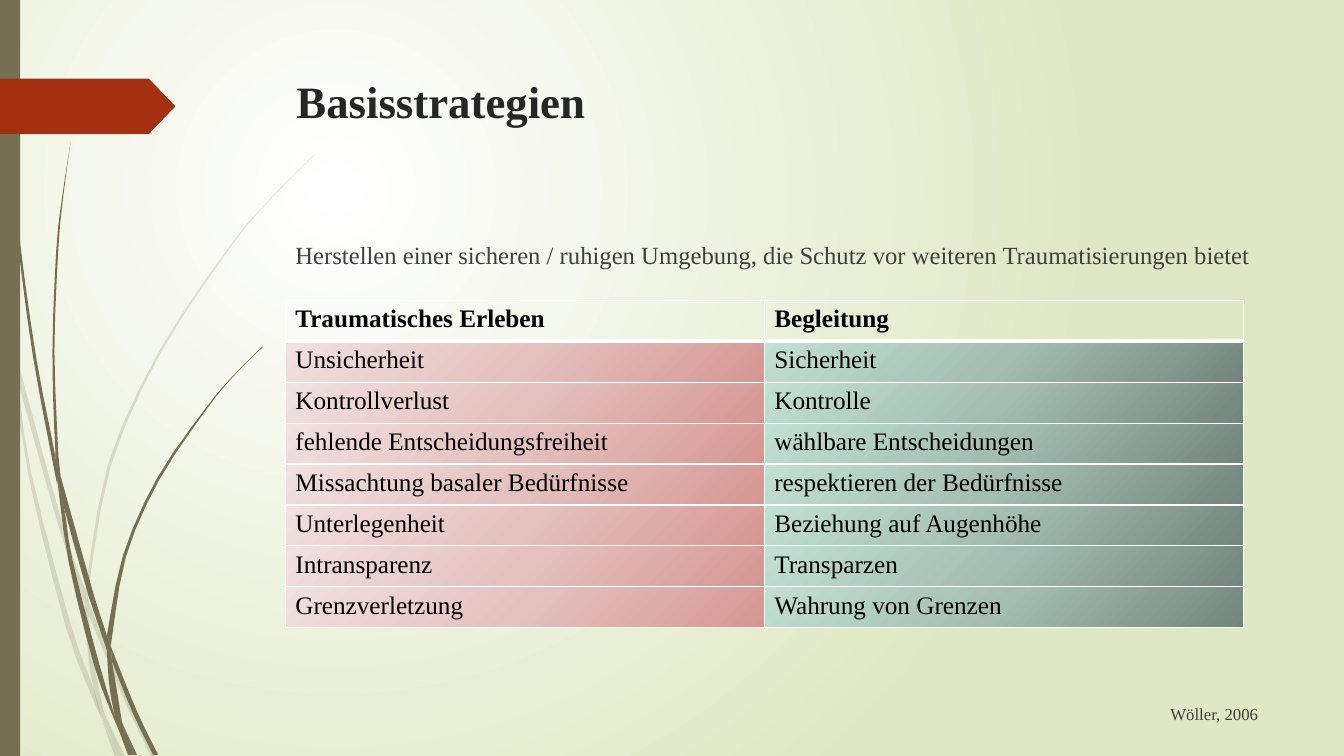
from lxml.etree import SubElement
from pptx import Presentation
from pptx.dml.color import RGBColor
from pptx.enum.shapes import MSO_SHAPE
from pptx.enum.text import MSO_ANCHOR, MSO_AUTO_SIZE, PP_ALIGN
from pptx.oxml import parse_xml
from pptx.oxml.ns import nsdecls, qn
from pptx.util import Inches, Pt

COLORS = {
    "white": "FFFFFF", "meadow": "DFE8C4", "olive": "766F54", "rust": "A53010",
    "title": "262626", "body": "404040", "black": "000000",
}
RED_STOPS = ["D69793", "E4C1BF", "F1E1E0"]
GREEN_STOPS = ["73857D", "A3BDB2", "C1E0D3"]
ROWS = [
    ("Traumatisches Erleben", "Begleitung"),
    ("Unsicherheit", "Sicherheit"),
    ("Kontrollverlust", "Kontrolle"),
    ("fehlende Entscheidungsfreiheit", "wählbare Entscheidungen"),
    ("Missachtung basaler Bedürfnisse", "respektieren der Bedürfnisse"),
    ("Unterlegenheit", "Beziehung auf Augenhöhe"),
    ("Intransparenz", "Transparzen"),
    ("Grenzverletzung", "Wahrung von Grenzen"),
]
FAINT_BLADES = [
    ([(0, 2.82), (0.09, 3.22), (0.11, 3.5)], [(0.1, 3.44), (0, 2.99)]),
    ([(0.14, 3.45), (0.62, 5.2), (0.85, 5.86)], [(0.84, 5.99), (0.58, 5.22), (0.17, 3.76)]),
    ([(0.88, 5.96), (0.92, 6.07), (1.27, 6.92), (1.55, 7.51)], [(1.5, 7.51), (1.23, 6.94), (0.88, 6.1)]),
    ([(1.05, 7.11), (1.24, 7.51)], [(1.19, 7.51), (1.05, 7.11)]),
    ([(0.11, 3.5), (0.17, 3.76), (0.31, 4.69), (0.7, 6.19), (0.93, 6.83), (1.01, 7.14)],
     [(0.92, 6.93), (0.65, 6.21), (0.28, 4.7), (0.11, 3.5)]),
    ([(0.84, 5.99), (0.87, 6.46), (0.93, 6.83), (1.05, 7.11)], [(1.03, 7.06), (0.91, 6.46), (0.88, 6.1)]),
    ([(3.12, 1.53), (2.68, 1.97), (2.28, 2.44), (1.58, 3.48), (1.07, 4.61), (0.85, 5.84)],
     [(0.88, 5.96), (0.88, 5.84), (1.1, 4.62), (1.6, 3.49), (2.29, 2.45), (2.68, 1.98), (3.12, 1.54)]),
    ([(1.01, 7.14), (1.14, 7.51)], [(1.19, 7.51), (1.01, 7.14)]),
    ([(0.85, 5.86), (0.84, 5.99), (0.88, 6.1)], [(0.88, 5.96), (0.85, 5.86)]),
    ([(0.93, 6.83), (0.99, 7.07), (1.19, 7.51)], [(1.19, 7.51), (1.05, 7.11), (0.96, 6.92)]),
]
DARK_BLADES = [
    ([(0.04, 0), (0.05, 0.48), (0.08, 1.09), (0.19, 2.32), (0.36, 3.55), (0.55, 4.53), (0.57, 4.81)],
     [(0.56, 4.77), (0.33, 3.55), (0.17, 2.33), (0.07, 1.1), (0.04, 0.48), (0.03, 0)]),
    ([(0.6, 4.72), (0.93, 5.9), (1.06, 6.31), (1.06, 6.45)], [(0.88, 5.92), (0.64, 5.05), (0.6, 4.72)]),
    ([(1.1, 6.41), (1.13, 6.49), (1.36, 7.06), (1.57, 7.49)], [(1.52, 7.49), (1.32, 7.08), (1.11, 6.56)]),
    ([(0.57, 4.77), (0.64, 5.05), (0.72, 5.56), (0.98, 6.57), (1.16, 7.17)],
     [(1.17, 7.22), (1.11, 7.08), (0.93, 6.59), (0.68, 5.57), (0.57, 4.77)]),
    ([(0.7, 1.41), (0.62, 1.93), (0.56, 2.45), (0.52, 3.49), (0.55, 4.49), (0.6, 4.72)],
     [(0.58, 4.53), (0.54, 3.49), (0.58, 2.45), (0.63, 1.93), (0.7, 1.41)]),
    ([(1.22, 7.19), (1.36, 7.49)], [(1.33, 7.49), (1.22, 7.19)]),
    ([(0.55, 4.49), (0.6, 4.72), (0.64, 5.05)], [(0.57, 4.77), (0.55, 4.53)]),
    ([(2.6, 3.44), (2.31, 3.73), (2.04, 4.05), (1.56, 4.74), (1.22, 5.51), (1.06, 6.31)],
     [(1.1, 6.41), (1.11, 6.33), (1.25, 5.52), (1.58, 4.76), (2.05, 4.06), (2.31, 3.74), (2.61, 3.44)]),
    ([(1.17, 7.22), (1.27, 7.49)], [(1.31, 7.49), (1.17, 7.22)]),
    ([(1.06, 6.45), (1.1, 6.91), (1.22, 7.19)], [(1.21, 7.16), (1.11, 6.56), (1.06, 6.45)]),
    ([(1.06, 6.31), (1.06, 6.45), (1.11, 6.56)], [(1.1, 6.41), (1.06, 6.31)]),
    ([(1.1, 6.91), (1.17, 7.22), (1.3, 7.49)], [(1.33, 7.49), (1.22, 7.19), (1.1, 6.91)]),
]


def smooth(points, steps=3):
    """Return points along a Catmull-Rom curve through the given points."""
    padded = [points[0], *points, points[-1]]
    curve = []
    for before, start, end, after in zip(padded, padded[1:], padded[2:], padded[3:]):
        for step in range(steps):
            t = step / steps
            curve.append(tuple(
                b + ((c - a) * t + (2 * a - 5 * b + 4 * c - d) * t**2
                     + (3 * b - a - 3 * c + d) * t**3) / 2
                for a, b, c, d in zip(before, start, end, after)))
    return curve + [points[-1]]


def gradient(stops, direction):
    """Return a gradient fill with evenly spaced stops."""
    marks = "".join(
        f'<a:gs pos="{100000 * index // (len(stops) - 1)}"><a:srgbClr val="{color}"/></a:gs>'
        for index, color in enumerate(stops))
    return parse_xml(
        f'<a:gradFill {nsdecls("a")} rotWithShape="1"><a:gsLst>{marks}</a:gsLst>{direction}</a:gradFill>')


class SlideBuilder:
    """Hold the font and the current slide and add its elements."""

    font_name = "Times New Roman"

    def __init__(self, slide):
        """Start on the given slide."""
        self.slide = slide

    def background(self, stops):
        """Fill the background with a radial gradient."""
        self.slide.background.fill.solid()
        solid = next(self.slide.element.iter(qn("a:solidFill")))
        solid.getparent().replace(solid, gradient(
            stops, '<a:path path="circle"><a:fillToRect l="50000" t="50000" r="100000" b="100000"/></a:path>'))

    def paint(self, shape, color):
        """Give a shape a plain fill without line or shadow."""
        shape.shadow.inherit = False
        shape.fill.solid()
        shape.fill.fore_color.rgb = RGBColor.from_string(COLORS[color])
        shape.line.fill.background()

    def preset(self, kind, box, color):
        """Add a plain preset shape."""
        shape = self.slide.shapes.add_shape(kind, *map(Inches, box))
        self.paint(shape, color)
        return shape

    def blade(self, edges, opacity):
        """Add a piece of grass between two curved edges."""
        start, *rest = [tuple(map(Inches, point)) for edge in edges for point in smooth(edge)]
        builder = self.slide.shapes.build_freeform(*start)
        builder.add_line_segments(rest, close=True)
        shape = builder.convert_to_shape()
        self.paint(shape, "olive")
        if opacity < 100:
            color = next(shape.element.spPr.iter(qn("a:srgbClr")))
            SubElement(color, qn("a:alpha")).set("val", str(opacity * 1000))

    def format(self, paragraph, size, color, bold=False):
        """Format the runs of a paragraph."""
        for run in paragraph.runs:
            run.font.name = self.font_name
            run.font.size = Pt(size)
            run.font.bold = bold
            run.font.color.rgb = RGBColor.from_string(COLORS[color])

    def placeholder(self, shape, box, text):
        """Place a placeholder in front and return its paragraphs."""
        shape.left, shape.top, shape.width, shape.height = map(Inches, box)
        shape.element.getparent().append(shape.element)
        frame = shape.text_frame
        frame.text = text
        frame.word_wrap = True
        frame.auto_size = MSO_AUTO_SIZE.NONE
        frame.vertical_anchor = MSO_ANCHOR.TOP
        for paragraph in frame.paragraphs:
            paragraph.alignment = PP_ALIGN.LEFT
        return frame.paragraphs

    def title(self, text):
        """Fill the title."""
        paragraph, = self.placeholder(self.slide.shapes.title, (2.84, 0.68, 9.75, 1.4), text)
        self.format(paragraph, 32, "title", True)

    def body(self, statement, citation):
        """Fill the body with a statement and a citation far below it."""
        paragraphs = self.placeholder(
            self.slide.placeholders[1], (2.83, 2.33, 9.75, 4.47), f"{statement}\n{citation}")
        for paragraph, size, space in zip(paragraphs, (17.6, 12), (10, 310)):
            self.format(paragraph, size, "body")
            paragraph.space_before = Pt(space)
            properties = paragraph._p.get_or_add_pPr()
            properties.set("marL", "0")
            properties.set("indent", "0")
            SubElement(properties, qn("a:buNone"))
        paragraphs[1].alignment = PP_ALIGN.RIGHT

    def cell(self, cell, text, header, first, stops):
        """Fill, frame and format one table cell."""
        cell.text_frame.text = text
        self.format(cell.text_frame.paragraphs[0], 18, "black", header)
        properties = cell._tc.get_or_add_tcPr()
        widths = {"L": 1, "R": 1, "T": 3 if first else 1, "B": 3 if header else 1}
        for side, width in widths.items():
            properties.append(parse_xml(
                f'<a:ln{side} {nsdecls("a")} w="{Pt(width)}"><a:solidFill>'
                f'<a:srgbClr val="{COLORS["white"]}"/></a:solidFill></a:ln{side}>'))
        if header:
            cell.fill.background()
        else:
            properties.append(gradient(stops, '<a:lin ang="13500000" scaled="1"/>'))

    def table(self, rows, box):
        """Add the two-column comparison."""
        table = self.slide.shapes.add_table(len(rows), 2, *map(Inches, box)).table
        for row, texts in enumerate(rows):
            for column, (text, stops) in enumerate(zip(texts, (RED_STOPS, GREEN_STOPS))):
                self.cell(table.cell(row, column), text, row == 0, row == 1, stops)


def main():
    """Build and save the slide."""
    presentation = Presentation()
    presentation.slide_width, presentation.slide_height = Inches(13.33), Inches(7.5)
    builder = SlideBuilder(presentation.slides.add_slide(presentation.slide_layouts[1]))
    builder.background([COLORS["white"], COLORS["meadow"]])
    for blades, opacity in ((FAINT_BLADES, 20), (DARK_BLADES, 100)):
        for edges in blades:
            builder.blade(edges, opacity)
    builder.preset(MSO_SHAPE.RECTANGLE, (0, 0, 0.2, 7.5), "olive")
    arrow = builder.preset(MSO_SHAPE.PENTAGON, (0, 0.78, 1.74, 0.55), "rust")
    arrow.adjustments[0] = 0.48
    builder.title("Basisstrategien")
    builder.body("Herstellen einer sicheren / ruhigen Umgebung, die Schutz vor weiteren "
                 "Traumatisierungen bietet", "Wöller, 2006")
    builder.table(ROWS, (2.83, 2.98, 9.5, 3.25))
    presentation.save("out.pptx")


if __name__ == "__main__":
    main()
